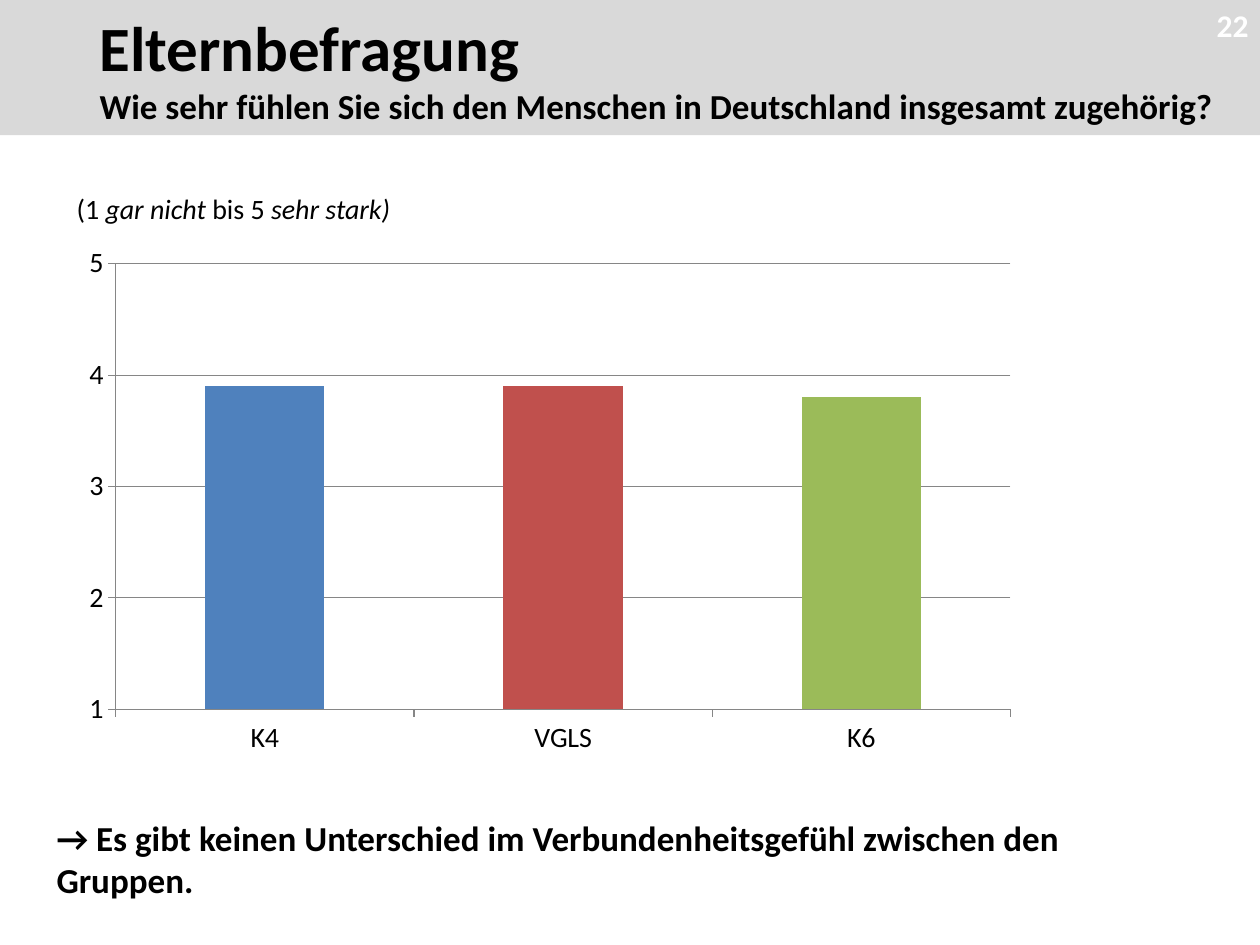
from dataclasses import dataclass

from lxml import etree
from pptx import Presentation
from pptx import util as u
from pptx.chart.data import CategoryChartData
from pptx.dml.color import RGBColor
from pptx.enum import chart as charts, text
from pptx.oxml import parse_xml
from pptx.oxml.ns import nsdecls, qn

WIDTH, HEIGHT = u.Inches(10), u.Inches(7.5)


@dataclass(frozen=True)
class Theme:
    font: str = "Calibri"
    ink: str = "000000"
    page_number: str = "FFFFFF"
    band: str = "D9D9D9"
    rule: str = "868686"
    groups: tuple = ("4F81BD", "C0504D", "9BBB59")
    heading_size: int = 36
    statement_size: int = 20
    number_size: int = 18
    label_size: int = 16


THEME = Theme()


def share(left, top, width, height):
    return [round(part * whole) for part, whole in
            zip((left, top, width, height), (WIDTH, HEIGHT) * 2)]


def style(font, size, color=THEME.ink, bold=False):
    font.name, font.size, font.bold = THEME.font, u.Pt(size), bold
    font.color.rgb = RGBColor.from_string(color)


def add_header(slide, heading, question):
    header = slide.shapes.title
    header.left, header.top, header.width, header.height = share(0, 0, 1, 0.143)
    header.fill.solid()
    header.fill.fore_color.rgb = RGBColor.from_string(THEME.band)
    frame = header.text_frame
    frame.text = f"{heading}\n{question}"
    frame.word_wrap = True
    frame.auto_size = text.MSO_AUTO_SIZE.NONE
    frame.vertical_anchor = text.MSO_ANCHOR.MIDDLE
    frame.margin_left = u.Inches(0.79)
    for line, size in zip(frame.paragraphs, (THEME.heading_size, THEME.statement_size)):
        line.alignment = text.PP_ALIGN.LEFT
        style(line.font, size, bold=True)


def add_note(slide, area, parts, size, color=THEME.ink, bold=False):
    frame = slide.shapes.add_textbox(*share(*area)).text_frame
    frame.word_wrap = True
    line = frame.paragraphs[0]
    style(line.font, size, color, bold)
    for wording, italic in parts:
        run = line.add_run()
        run.text = wording
        if italic:
            run.font.italic = True
    return frame


def add_page_number(slide, number):
    frame = add_note(slide, (0.881, 0, 0.11, 0.053), [(number, False)],
                     THEME.number_size, THEME.page_number, bold=True)
    frame.margin_left = frame.margin_right = frame.margin_top = frame.margin_bottom = 0
    frame.vertical_anchor = text.MSO_ANCHOR.MIDDLE
    frame.paragraphs[0].alignment = text.PP_ALIGN.RIGHT


def place_plot(chart, **area):
    plot_area = chart.plots[0]._element.getparent()
    for old in plot_area.findall(qn("c:layout")):
        plot_area.remove(old)
    layout = parse_xml(f"<c:layout {nsdecls('c')}><c:manualLayout/></c:layout>")
    settings = {"layoutTarget": "inner", "xMode": "edge", "yMode": "edge", **area}
    for tag, value in settings.items():
        etree.SubElement(layout[0], qn(f"c:{tag}")).set("val", str(value))
    plot_area.insert(0, layout)


def draw_rule(line):
    line.color.rgb = RGBColor.from_string(THEME.rule)
    line.width = u.Pt(0.75)


def add_group_chart(slide, area, means):
    data = CategoryChartData()
    data.categories = list(means)
    data.add_series("Series 1", list(means.values()))
    chart = slide.shapes.add_chart(
        charts.XL_CHART_TYPE.COLUMN_CLUSTERED, *share(*area), data).chart
    style(chart.font, THEME.label_size)
    chart.has_legend = chart.has_title = False
    columns = chart.plots[0]
    columns.gap_width = 150
    columns.vary_by_categories = False
    for index, color in enumerate(THEME.groups):
        fill = columns.series[0].points[index].format.fill
        fill.solid()
        fill.fore_color.rgb = RGBColor.from_string(color)
    for axis in (chart.category_axis, chart.value_axis):
        axis.major_tick_mark = charts.XL_TICK_MARK.OUTSIDE
        axis.minor_tick_mark = charts.XL_TICK_MARK.NONE
        draw_rule(axis.format.line)
    scale = chart.value_axis
    scale.minimum_scale, scale.maximum_scale, scale.major_unit = 1, 5, 1
    scale.tick_labels.number_format = "General"
    scale.tick_labels.number_format_is_linked = False
    scale.has_major_gridlines = True
    draw_rule(scale.major_gridlines.format.line)
    place_plot(chart, x=0.05, y=0.035, w=0.914, h=0.817)


def main():
    deck = Presentation()
    deck.slide_width, deck.slide_height = WIDTH, HEIGHT
    slide = deck.slides.add_slide(deck.slide_layouts.get_by_name("Title Only"))
    add_header(slide, "Elternbefragung",
               "Wie sehr fühlen Sie sich den Menschen in Deutschland insgesamt zugehörig?")
    add_note(slide, (0.051, 0.196, 0.858, 0.049),
             [("(1 ", False), ("gar nicht ", True), ("bis 5 ", False), ("sehr stark)", True)],
             THEME.label_size)
    add_group_chart(slide, (0.053, 0.259, 0.777, 0.577),
                    {"K4": 3.9, "VGLS": 3.9, "K6": 3.8})
    add_note(slide, (0.035, 0.857, 0.858, 0.103),
             [("→ Es gibt keinen Unterschied im Verbundenheitsgefühl zwischen den Gruppen.", False)],
             THEME.statement_size, bold=True)
    add_page_number(slide, "22")
    deck.save("out.pptx")


if __name__ == "__main__":
    main()
